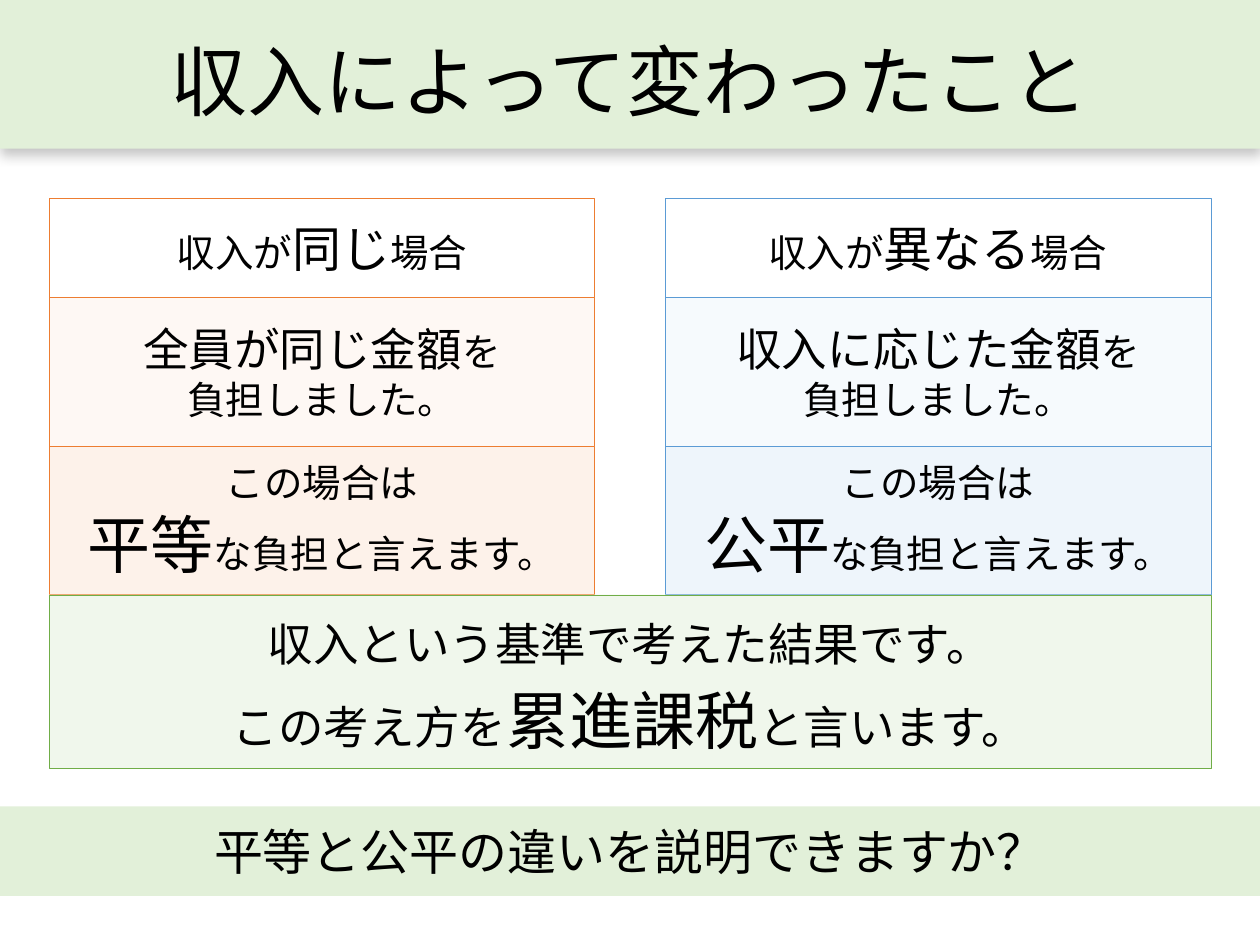
"""Build the slide comparing equal and fair burdens by income."""
from lxml.etree import SubElement
from pptx import Presentation
from pptx.dml.color import RGBColor
from pptx.enum.shapes import MSO_SHAPE as Shape
from pptx.enum.text import MSO_ANCHOR as Anchor, MSO_AUTO_SIZE as AutoSize, PP_ALIGN as Align
from pptx.oxml.ns import qn
from pptx.util import Inches, Pt

JAPANESE_FONT = "Noto Sans CJK JP"
BLACK = RGBColor(0x00, 0x00, 0x00)
WHITE = RGBColor(0xFF, 0xFF, 0xFF)
BAND_GREEN = RGBColor(0xE2, 0xF0, 0xD9)
GREEN = RGBColor(0x70, 0xAD, 0x47)
PALE_GREEN = RGBColor(0xF0, 0xF7, 0xEC)
ORANGE = RGBColor(0xED, 0x7D, 0x31)
ORANGE_TINTS = (WHITE, RGBColor(0xFE, 0xF8, 0xF4), RGBColor(0xFD, 0xF2, 0xEA))
BLUE = RGBColor(0x5B, 0x9B, 0xD5)
BLUE_TINTS = (WHITE, RGBColor(0xF6, 0xFA, 0xFD), RGBColor(0xEE, 0xF5, 0xFB))

SLIDE_WIDTH = 10
MARGIN = 0.39
COLUMN_WIDTH = 4.33
COLUMNS_TOP = 1.57
ROW_HEIGHTS = (0.79, 1.18, 1.18)


def format_run(run, size, font=JAPANESE_FONT):
    """Set the size, colour and both typefaces of a run."""
    run.font.size = Pt(size)
    run.font.name = font
    run.font.color.rgb = BLACK
    SubElement(run.font._element, qn("a:ea"), typeface=JAPANESE_FONT)


def set_frame(frame, margins):
    """Set wrapping, middle anchoring and margins given as left, top, right, bottom."""
    frame.word_wrap = True
    frame.auto_size = AutoSize.NONE
    frame.vertical_anchor = Anchor.MIDDLE
    frame.margin_left, frame.margin_top, frame.margin_right, frame.margin_bottom = map(Inches, margins)


def fill_paragraph(paragraph, lines):
    """Write lines of (text, size) pieces, separated by line breaks."""
    paragraph.alignment = Align.CENTER
    for index, pieces in enumerate(lines):
        if index:
            paragraph.add_line_break()
        for text, size in pieces:
            run = paragraph.add_run()
            run.text = text
            format_run(run, size)


def add_box(slide, place, fill, outline, paragraphs, margins=(0, 0, 0, 0)):
    """Add a filled rectangle holding centred paragraphs."""
    box = slide.shapes.add_shape(Shape.RECTANGLE, *map(Inches, place))
    box.shadow.inherit = False
    box.fill.solid()
    box.fill.fore_color.rgb = fill
    if outline is None:
        box.line.fill.background()
    else:
        box.line.color.rgb = outline
        box.line.width = Pt(0.25)
    frame = box.text_frame
    set_frame(frame, margins)
    for index, lines in enumerate(paragraphs):
        paragraph = frame.add_paragraph() if index else frame.paragraphs[0]
        fill_paragraph(paragraph, lines)
    return box


def add_bottom_shadow(shape):
    """Give a shape a soft shadow that falls straight down."""
    shape.shadow.inherit = False
    effects = shape._element.spPr.find(qn("a:effectLst"))
    shadow = SubElement(effects, qn("a:outerShdw"), blurRad=str(Pt(7)), dist=str(Pt(3)),
                        dir="5400000", algn="t", rotWithShape="0")
    colour = SubElement(shadow, qn("a:srgbClr"), val=str(BLACK))
    SubElement(colour, qn("a:alpha"), val="23000")


def set_title(slide, text):
    """Turn the title placeholder into the band across the top."""
    title = slide.shapes.title
    title.left, title.top, title.width, title.height = map(Inches, (0, 0, SLIDE_WIDTH, 1.18))
    title.fill.solid()
    title.fill.fore_color.rgb = BAND_GREEN
    add_bottom_shadow(title)
    title.text_frame.text = text
    set_frame(title.text_frame, (0, 0.08, 0, 0))
    paragraph = title.text_frame.paragraphs[0]
    paragraph.alignment = Align.CENTER
    format_run(paragraph.runs[0], 44, "Arial")


def add_case_column(slide, left, outline, tints, condition, amount, verdict):
    """Stack the condition, the amount paid and the verdict of one case."""
    rows = (
        [[("収入が", 22), (condition, 28), ("場合", 22)]],
        [[(amount, 26), ("を", 22)], [("負担しました。", 22)]],
        [[("この場合は", 22)], [(verdict, 36), ("な負担と言えます。", 22)]],
    )
    top = COLUMNS_TOP
    for height, tint, lines in zip(ROW_HEIGHTS, tints, rows):
        add_box(slide, (left, top, COLUMN_WIDTH, height), tint, outline, [lines])
        top += height


def add_conclusion(slide):
    """Add the green box that spans both columns below them."""
    top = COLUMNS_TOP + sum(ROW_HEIGHTS)
    paragraphs = (
        [[("収入という基準で考えた結果です。", 26)]],
        [[("この考え方を", 26), ("累進課税", 36), ("と言います。", 26)]],
    )
    conclusion = add_box(slide, (MARGIN, top, SLIDE_WIDTH - 2 * MARGIN, 1.38),
                         PALE_GREEN, GREEN, paragraphs, (0.1, 0.08, 0.1, 0))
    conclusion.text_frame.paragraphs[0].space_after = Pt(6)


def main():
    """Build and save the slide."""
    presentation = Presentation()
    presentation.slide_width = Inches(SLIDE_WIDTH)
    presentation.slide_height = Inches(7.5)
    slide = presentation.slides.add_slide(presentation.slide_layouts[5])
    set_title(slide, "収入によって変わったこと")
    add_box(slide, (0, 6.4, SLIDE_WIDTH, 0.71), BAND_GREEN, None,
            [[[("平等と公平の違いを説明できますか？", 28)]]], (0.1, 0, 0.1, 0))
    add_case_column(slide, MARGIN, ORANGE, ORANGE_TINTS, "同じ", "全員が同じ金額", "平等")
    add_case_column(slide, SLIDE_WIDTH - MARGIN - COLUMN_WIDTH, BLUE, BLUE_TINTS,
                    "異なる", "収入に応じた金額", "公平")
    add_conclusion(slide)
    presentation.save("out.pptx")


if __name__ == "__main__":
    main()
